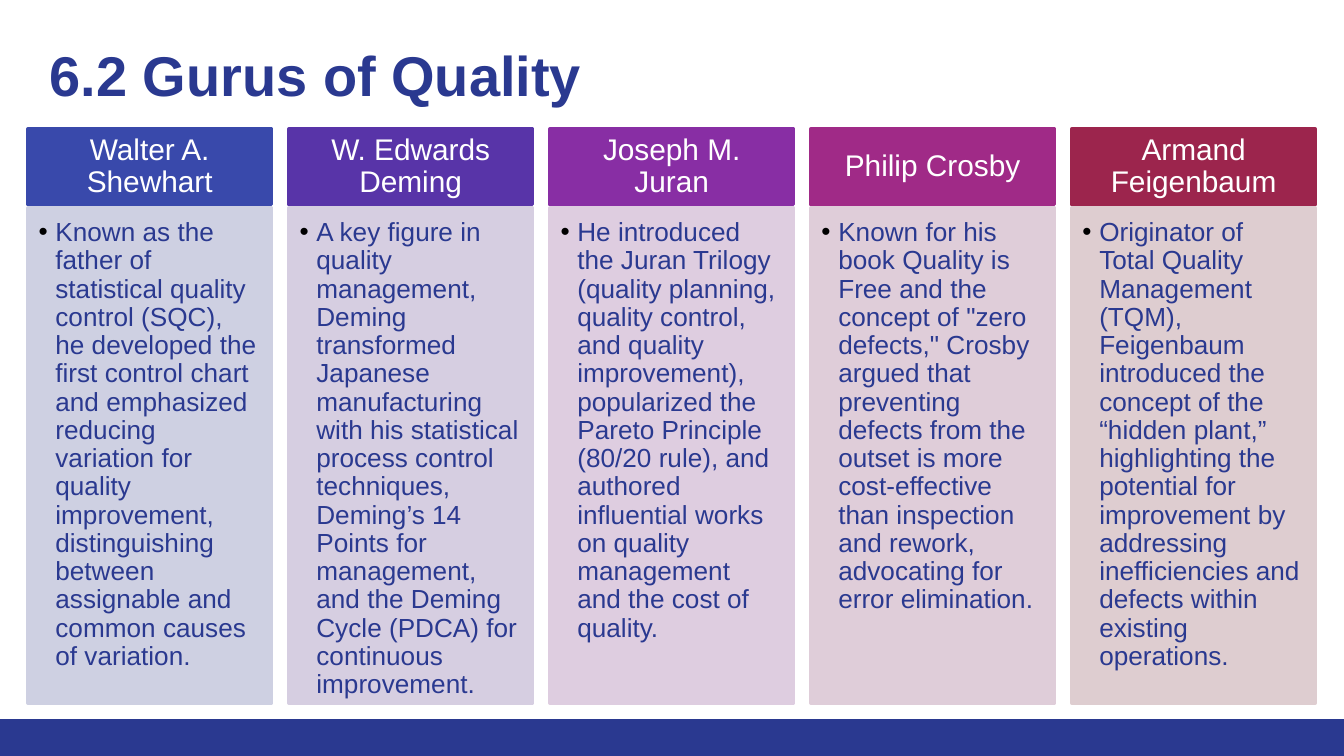
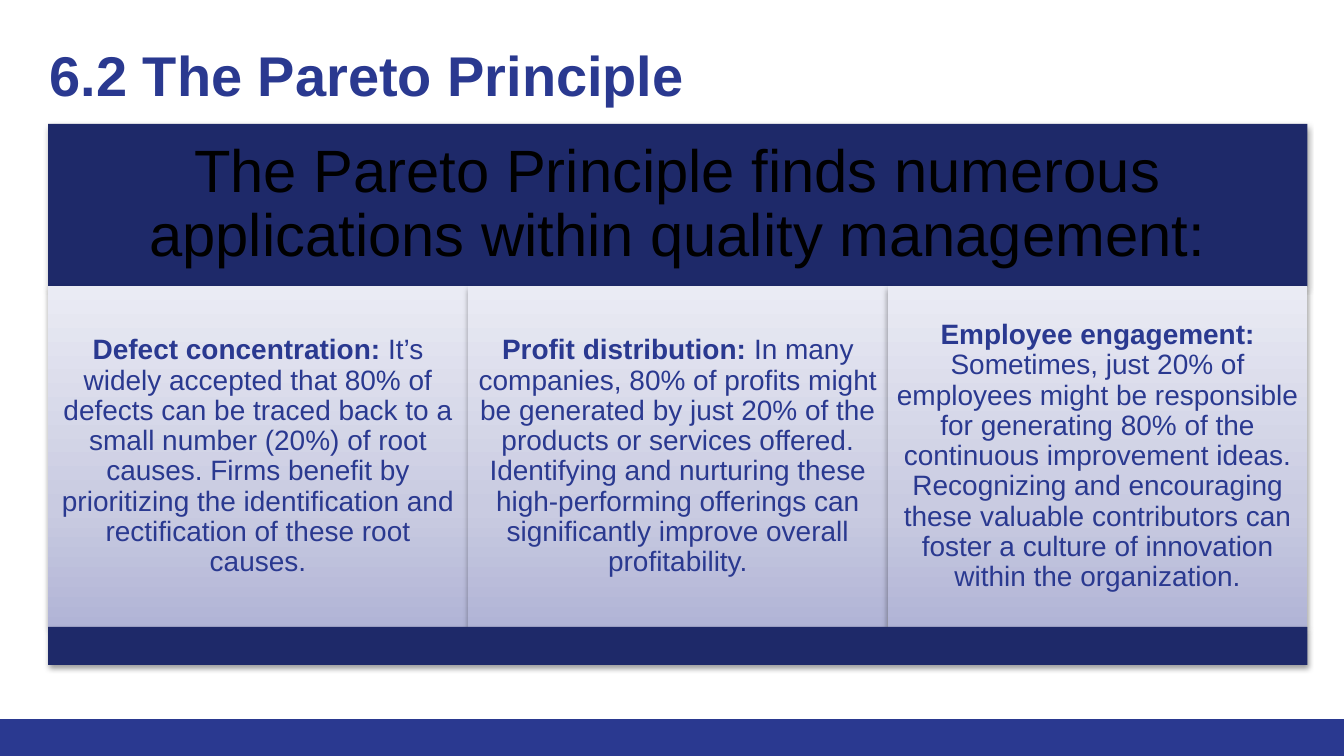
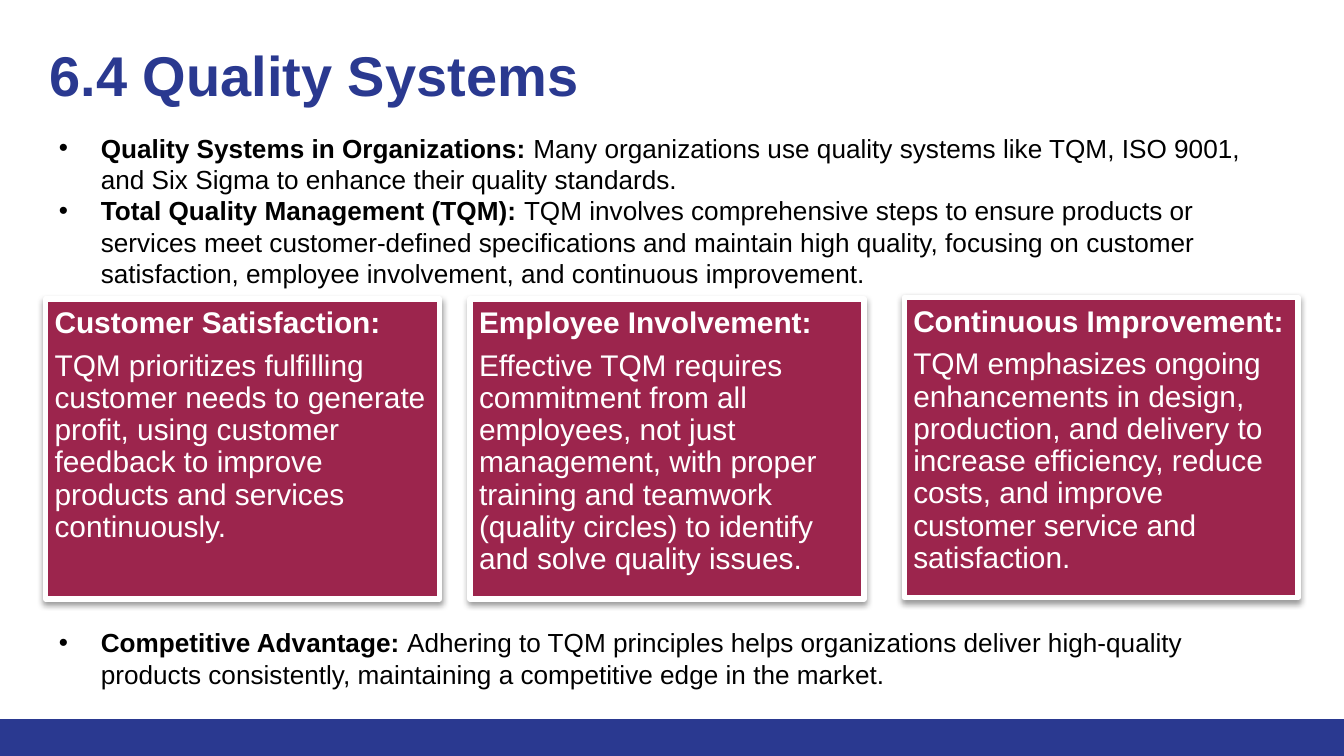
"""Build three slides on quality gurus, the Pareto Principle and quality systems."""
from dataclasses import dataclass

from lxml.etree import SubElement as sub
from pptx import Presentation
from pptx.dml.color import RGBColor as RGB
from pptx.enum.shapes import MSO_SHAPE as Form
from pptx.enum.text import MSO_ANCHOR as Anchor, MSO_AUTO_SIZE as Fit, PP_ALIGN as Align
from pptx.oxml.ns import qn
from pptx.util import Pt


@dataclass(frozen=True)
class Theme:
    font: str = "Arial"
    blue: str = "2A3990"
    navy: str = "1E2969"
    wine: str = "9C254D"
    white: str = "FFFFFF"
    black: str = "000000"
    fade: tuple = ((0, "B1B4D6"), (35, "C9CBE1"), (100, "EAEBF4"))
    title: int = 30
    banner: int = 32
    head: int = 16
    card: int = 15
    body: int = 14


look = Theme()


def box(slide, left, top, width, height, fill, line=None, weight=0, shade=False):
    """Add a filled rectangle, with an outline or a soft shadow if asked."""
    shape = slide.shapes.add_shape(Form.RECTANGLE, Pt(left), Pt(top), Pt(width), Pt(height))
    shape.fill.solid()
    shape.fill.fore_color.rgb = RGB.from_string(fill)
    if line:
        shape.line.color.rgb = RGB.from_string(line)
        shape.line.width = Pt(weight)
    else:
        shape.line.fill.background()
    shape.shadow.inherit = False
    if shade:
        effect = shape.element.spPr.find(qn("a:effectLst"))
        cast = sub(effect, qn("a:outerShdw"), blurRad=str(Pt(3.15)), dist=str(Pt(1.57)),
                   dir="5400000", rotWithShape="0")
        tint = sub(cast, qn("a:srgbClr"), val=look.black)
        sub(tint, qn("a:alpha"), val="38000")
    return shape


def write(shape, parts, size, color, inset, align=Align.LEFT, anchor=Anchor.TOP,
          pitch=None, gap=0, indent=0):
    """Fill a shape with paragraphs, each a bold lead and a plain rest."""
    frame = shape.text_frame
    frame.word_wrap = True
    frame.auto_size = Fit.NONE
    frame.vertical_anchor = anchor
    (frame.margin_left, frame.margin_top,
     frame.margin_right, frame.margin_bottom) = map(Pt, inset)
    for index, (lead, rest) in enumerate(parts):
        para = frame.add_paragraph() if index else frame.paragraphs[0]
        para.alignment = align
        para.line_spacing = pitch
        para.space_after = Pt(gap)
        if indent:
            props = para._p.get_or_add_pPr()
            props.set("marL", str(Pt(indent)))
            props.set("indent", str(-Pt(indent)))
            sub(sub(props, qn("a:buClr")), qn("a:srgbClr"), val=look.black)
            sub(props, qn("a:buFont"), typeface=look.font)
            sub(props, qn("a:buChar"), char="•")
        para.font.name = look.font
        para.font.size = Pt(size)
        para.font.bold = not rest
        para.font.color.rgb = RGB.from_string(color)
        if lead:
            run = para.add_run()
            run.text = lead
            if rest:
                run.font.bold = True
        if rest:
            para.add_run().text = rest


deck = Presentation()
deck.slide_width, deck.slide_height = Pt(720), Pt(405)
layout = deck.slide_layouts[5]

slides = []
for name, width in (("6.2 Gurus of Quality", 682.5), ("6.2 The Pareto Principle", 682.5),
                    ("6.4 Quality Systems", 676)):
    slide = deck.slides.add_slide(layout)
    title = slide.shapes.title
    title.left, title.top, title.width, title.height = Pt(19.4), Pt(14.4), Pt(width), Pt(64)
    write(title, [(name, "")], look.title, look.blue, [7.2] * 4)
    slides.append(slide)
gurus, pareto, systems = slides

band = box(gurus, 0, 385.2, 720, 19.8, look.blue)
layout.shapes.element.append(band.element)

people = [
    ("Walter A. Shewhart", "3949AB", "CED0E2",
     "Known as the father of statistical quality control (SQC), he developed the first control "
     "chart and emphasized reducing variation for quality improvement, distinguishing between "
     "assignable and common causes of variation."),
    ("W. Edwards Deming", "5834A8", "D6CEE1",
     "A key figure in quality management, Deming transformed Japanese manufacturing with his "
     "statistical process control techniques, Deming’s 14 Points for management, and the Deming "
     "Cycle (PDCA) for continuous improvement."),
    ("Joseph M. Juran", "882EA4", "DECDE0",
     "He introduced the Juran Trilogy (quality planning, quality control, and quality "
     "improvement), popularized the Pareto Principle (80/20 rule), and authored influential "
     "works on quality management and the cost of quality."),
    ("Philip Crosby", "A02A87", "DFCDD9",
     "Known for his book Quality is Free and the concept of \"zero defects,\" Crosby argued that "
     "preventing defects from the outset is more cost-effective than inspection and rework, "
     "advocating for error elimination."),
    ("Armand Feigenbaum", look.wine, "DECDD0",
     "Originator of Total Quality Management (TQM), Feigenbaum introduced the concept of the "
     "“hidden plant,” highlighting the potential for improvement by addressing inefficiencies "
     "and defects within existing operations."),
]
for index, (name, dark, pale, text) in enumerate(people):
    left = 15 + 139.8 * index
    head = box(gurus, left, 69.1, 130.5, 40.5, dark, dark, 2)
    write(head, [("", name)], look.head, look.white, (8.96, 5.12, 8.96, 5.12),
          Align.CENTER, Anchor.MIDDLE, 0.9)
    body = box(gurus, left, 111.6, 130.5, 265, pale, pale, 2)
    write(body, [("", text)], look.body, look.blue, (5.7, 5.7, 7, 8.8), pitch=0.9, indent=9)

left, span = 25.8, 674.7
banner = box(pareto, left, 66.4, span, 87, look.navy, shade=True)
write(banner, [("", "The Pareto Principle finds numerous applications within quality management:")],
      look.banner, look.black, [9.6] * 4, Align.CENTER, Anchor.MIDDLE, 0.9)
uses = [
    ("Defect concentration: ",
     "It’s widely accepted that 80% of defects can be traced back to a small number (20%) of "
     "root causes. Firms benefit by prioritizing the identification and rectification of these "
     "root causes."),
    ("Profit distribution: ",
     "In many companies, 80% of profits might be generated by just 20% of the products or "
     "services offered. Identifying and nurturing these high-performing offerings can "
     "significantly improve overall profitability."),
    ("Employee engagement: ",
     "Sometimes, just 20% of employees might be responsible for generating 80% of the continuous "
     "improvement ideas. Recognizing and encouraging these valuable contributors can foster a "
     "culture of innovation within the organization."),
]
for index, use in enumerate(uses):
    width = span / len(uses)
    card = box(pareto, left + width * index, 153.4, width, 182.5, look.white, shade=True)
    card.fill.gradient()
    card.fill.gradient_angle = 90
    stops = card.element.spPr.find(".//" + qn("a:gsLst"))
    stops.clear()
    for place, color in look.fade:
        stop = sub(stops, qn("a:gs"), pos=str(place * 1000))
        sub(stop, qn("a:srgbClr"), val=color)
    write(card, [use], look.card, look.blue, [4.5] * 4, Align.CENTER, Anchor.MIDDLE, 0.9)
box(pareto, left, 335.9, span, 20.3, look.navy, shade=True)

notes = [
    (67.2, 92, [
        ("Quality Systems in Organizations: ",
         "Many organizations use quality systems like TQM, ISO 9001, and Six Sigma to enhance "
         "their quality standards."),
        ("Total Quality Management (TQM): ",
         "TQM involves comprehensive steps to ensure products or services meet customer-defined "
         "specifications and maintain high quality, focusing on customer satisfaction, employee "
         "involvement, and continuous improvement."),
    ]),
    (332.2, 41, [
        ("Competitive Advantage: ",
         "Adhering to TQM principles helps organizations deliver high-quality products "
         "consistently, maintaining a competitive edge in the market."),
    ]),
]
for top, height, parts in notes:
    note = systems.shapes.add_textbox(Pt(24.4), Pt(top), Pt(671), Pt(height))
    write(note, parts, look.body, look.black, (7.2, 3.6, 7.2, 3.6), indent=22.5)

pillars = [
    (24.5, 160.1, "Customer Satisfaction:",
     "TQM prioritizes fulfilling customer needs to generate profit, using customer feedback to "
     "improve products and services continuously."),
    (251.9, 160.1, "Employee Involvement:",
     "Effective TQM requires commitment from all employees, not just management, with proper "
     "training and teamwork (quality circles) to identify and solve quality issues."),
    (484.5, 159.4, "Continuous Improvement:",
     "TQM emphasizes ongoing enhancements in design, production, and delivery to increase "
     "efficiency, reduce costs, and improve customer service and satisfaction."),
]
for left, top, name, text in pillars:
    pillar = box(systems, left, top, 211, 160.8, look.wine, look.white, 3, True)
    write(pillar, [(name, ""), ("", text)], look.head, look.white, [4.8] * 4, pitch=0.9, gap=5.6)

deck.save("out.pptx")
